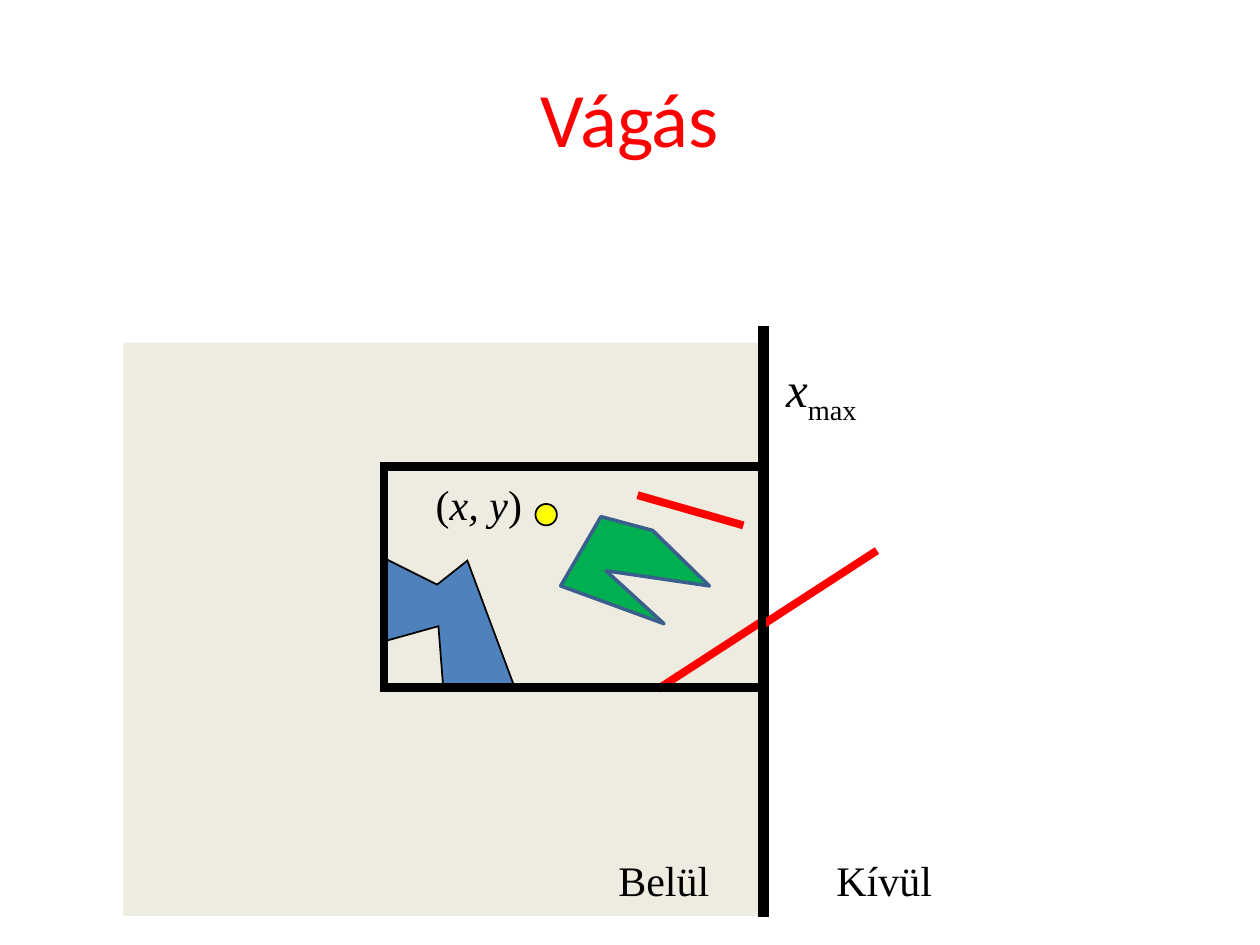
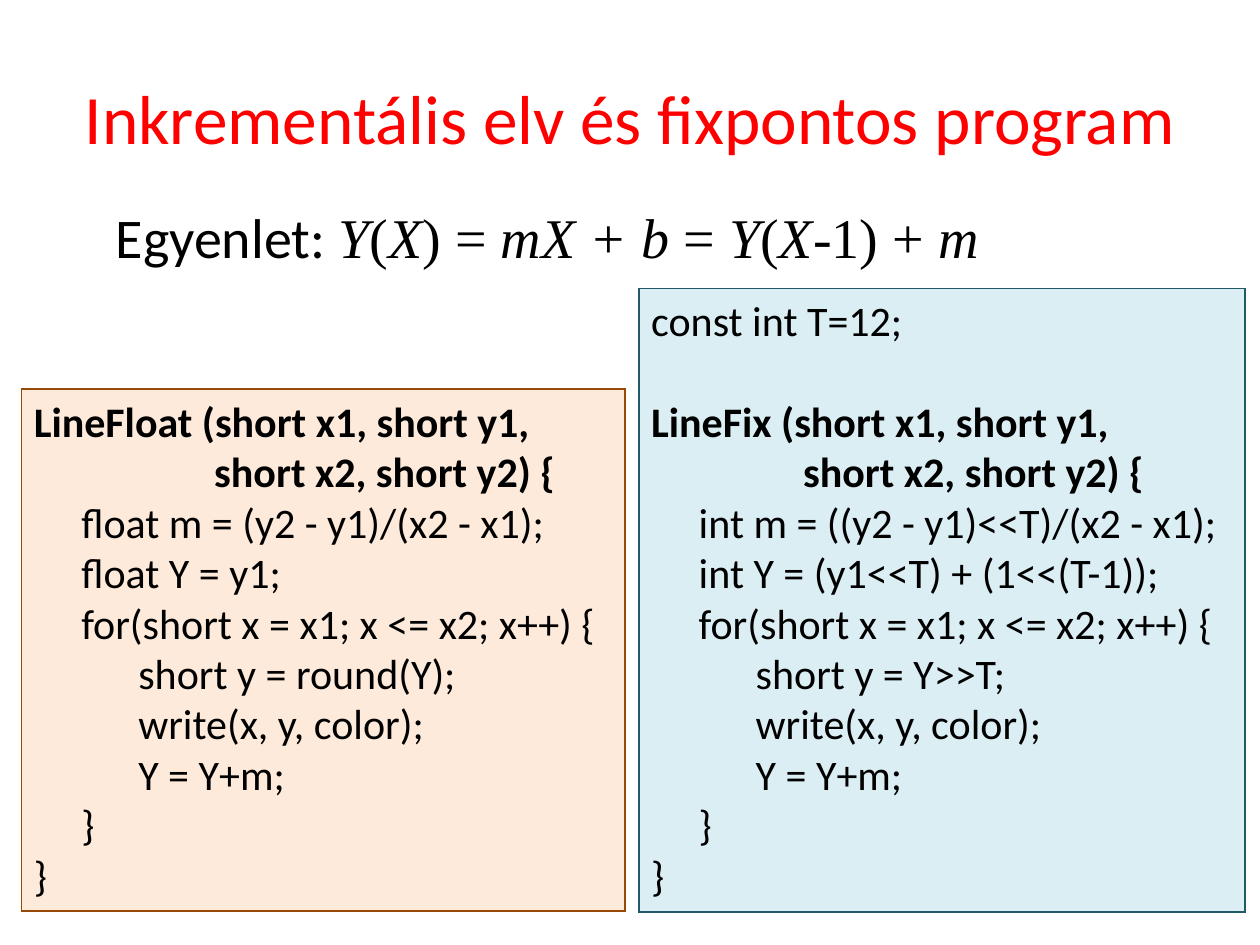
from dataclasses import dataclass

from lxml import etree
from pptx import Presentation
from pptx import util as u
from pptx.dml.color import RGBColor
from pptx.enum import shapes, text
from pptx.oxml.ns import qn


@dataclass(frozen=True)
class Theme:
    black: str = "000000"
    red: str = "FF0000"
    inside: str = "EEECE1"
    blue: str = "4F81BD"
    green: str = "00B050"
    green_edge: str = "3A5F8C"
    yellow: str = "FFFF00"
    sans: str = "Calibri"
    serif: str = "Times New Roman"
    title: float = 44
    long_title: float = 39.6
    equation: float = 32
    axis: float = 28
    body: float = 24
    hairline: float = 1
    outline: float = 2
    segment: float = 4.5
    boundary: float = 6


THEME = Theme()

CLIP_TITLE = "Vágás"
CODE_TITLE = "Inkrementális elv és fixpontos program"

HALF_PLANE = (0.98, 2.72, 5.07, 4.55)
BOUNDARY = ((6.06, 2.59), (6.06, 7.28))
WINDOWS = [(3.05, 3.7, 3, 1.75), (3.05, 3.71, 3, 1.75)]
POINT = (4.25, 4, 0.17, 0.17)
CUT_SEGMENTS = [((6.96, 4.37), (6.05, 4.96)), ((6.05, 4.93), (5.22, 5.47))]
INNER_SEGMENT = ((5.9, 4.17), (5.06, 3.93))
CLIPPED_POLYGON = [(3.05, 4.43), (3.05, 5.09), (3.48, 4.97), (3.52, 5.48),
                   (4.09, 5.47), (3.71, 4.45), (3.47, 4.64)]
INNER_POLYGON = [(4.77, 4.1), (4.45, 4.65), (5.27, 4.95), (4.81, 4.53),
                 (5.63, 4.65), (5.18, 4.21)]
LABELS = [
    ((6.14, 2.8, 0.82, 0.57), THEME.axis, [("x", "i"), ("max", "sub")]),
    ((4.81, 6.73, 0.93, 0.51), THEME.body, [("Belül", "")]),
    ((6.54, 6.73, 0.97, 0.51), THEME.body, [("Kívül", "")]),
    ((3.36, 3.75, 0.89, 0.51), THEME.body, [("(", ""), ("x, y", "i"), (")", "")]),
]

EQUATION_BOX = (0.82, 1.56, 8.5, 0.94)
EQUATION_LEAD = "Egyenlet: "
EQUATION = [("Y", "i"), ("(", ""), ("X", "i"), (") = ", ""), ("mX + b ", "i"),
            ("= ", ""), ("Y", "i"), ("(", ""), ("X", "i"), ("-1) + ", ""), ("m", "i")]

LOOP_HEAD = "     for(short x = x1; x <= x2; x++) {"
LOOP_TAIL = ["           write(x, y, color);", "           Y = Y+m;", "     }", "}"]
LISTINGS = [
    {
        "box": (0.17, 3.09, 4.79, 4.14), "fill": "FDEADA", "edge": "984807",
        "constants": [],
        "signature": ["LineFloat (short x1, short y1,",
                      "                   short x2, short y2) {"],
        "body": ["     float m = (y2 - y1)/(x2 - x1);", "     float Y = y1;",
                 LOOP_HEAD, "           short y = round(Y);"] + LOOP_TAIL,
    },
    {
        "box": (5.07, 2.29, 4.81, 4.95), "fill": "DBEEF4", "edge": "215968",
        "constants": ["const int T=12;"],
        "signature": ["LineFix (short x1, short y1,",
                      "                short x2, short y2) {"],
        "body": ["     int m = ((y2 - y1)<<T)/(x2 - x1);",
                 "     int Y = (y1<<T) + (1<<(T-1));",
                 LOOP_HEAD, "           short y = Y>>T;"] + LOOP_TAIL,
    },
]


def inches(values):
    return [u.Inches(v) for v in values]


def add_run(paragraph, words, size, face, color=THEME.black, style=""):
    run = paragraph.add_run()
    run.text = words
    font = run.font
    font.size, font.name = u.Pt(size), face
    font.bold, font.italic = style == "b", style == "i"
    font.color.rgb = RGBColor.from_string(color)
    if style == "sub":
        run._r.get_or_add_rPr().set("baseline", "-25000")


def paint(shape, fill=None, edge=None, width=THEME.hairline, join="miter"):
    shape.shadow.inherit = False
    if fill:
        shape.fill.solid()
        shape.fill.fore_color.rgb = RGBColor.from_string(fill)
    else:
        shape.fill.background()
    if edge:
        shape.line.color.rgb = RGBColor.from_string(edge)
        shape.line.width = u.Pt(width)
        etree.SubElement(shape._element.spPr.find(qn("a:ln")), qn(f"a:{join}"))
    else:
        shape.line.fill.background()


def add_preset(slide, kind, box, **look):
    shape = slide.shapes.add_shape(kind, *inches(box))
    paint(shape, **look)
    return shape


def add_polygon(slide, points, **look):
    start, *corners = [inches(point) for point in points]
    builder = slide.shapes.build_freeform(*start)
    builder.add_line_segments(corners, close=True)
    paint(builder.convert_to_shape(), **look)


def add_segment(slide, ends, color, width):
    segment = slide.shapes.add_connector(
        shapes.MSO_CONNECTOR.STRAIGHT, *inches(ends[0] + ends[1]))
    segment.line.color.rgb = RGBColor.from_string(color)
    segment.line.width = u.Pt(width)
    etree.SubElement(segment._element.spPr, qn("a:effectLst"))


def add_label(slide, box, size, parts):
    frame = slide.shapes.add_textbox(*inches(box)).text_frame
    frame.word_wrap = False
    frame.auto_size = text.MSO_AUTO_SIZE.SHAPE_TO_FIT_TEXT
    for words, style in parts:
        add_run(frame.paragraphs[0], words, size, THEME.serif, style=style)


def add_titled_slide(deck, words, size):
    slide = deck.slides.add_slide(deck.slide_layouts[5])
    title = slide.shapes.title
    title.left, title.top, title.width, title.height = inches((0.5, 0.3, 9, 1.25))
    frame = title.text_frame
    frame.vertical_anchor = text.MSO_ANCHOR.MIDDLE
    frame.paragraphs[0].alignment = text.PP_ALIGN.CENTER
    add_run(frame.paragraphs[0], words, size, THEME.sans, THEME.red)
    return slide


def add_listing(slide, listing):
    panel = add_preset(slide, shapes.MSO_SHAPE.RECTANGLE, listing["box"],
                       fill=listing["fill"], edge=listing["edge"])
    frame = panel.text_frame
    frame.word_wrap = True
    frame.vertical_anchor = text.MSO_ANCHOR.TOP
    lines = ([(line, "") for line in listing["constants"]]
             + [(line, "b") for line in listing["signature"]]
             + [(line, "") for line in listing["body"]])
    for number, (line, style) in enumerate(lines):
        paragraph = frame.add_paragraph() if number else frame.paragraphs[0]
        paragraph.alignment = text.PP_ALIGN.LEFT
        if number and number == len(listing["constants"]):
            paragraph.space_before = u.Pt(1.2 * THEME.body)
        add_run(paragraph, line, THEME.body, THEME.sans, style=style)


def build_clipping(deck):
    slide = add_titled_slide(deck, CLIP_TITLE, THEME.title)
    rectangle = shapes.MSO_SHAPE.RECTANGLE
    add_preset(slide, rectangle, HALF_PLANE, fill=THEME.inside)
    add_segment(slide, BOUNDARY, THEME.black, THEME.boundary)
    add_polygon(slide, CLIPPED_POLYGON, fill=THEME.blue, edge=THEME.black)
    for ends in CUT_SEGMENTS:
        add_segment(slide, ends, THEME.red, THEME.segment)
    for window in WINDOWS:
        add_preset(slide, rectangle, window, edge=THEME.black, width=THEME.segment)
    add_preset(slide, shapes.MSO_SHAPE.OVAL, POINT, fill=THEME.yellow, edge=THEME.black)
    add_segment(slide, INNER_SEGMENT, THEME.red, THEME.segment)
    add_polygon(slide, INNER_POLYGON, fill=THEME.green,
                edge=THEME.green_edge, width=THEME.outline, join="round")
    for label in LABELS:
        add_label(slide, *label)


def build_programs(deck):
    slide = add_titled_slide(deck, CODE_TITLE, THEME.long_title)
    frame = slide.shapes.add_textbox(*inches(EQUATION_BOX)).text_frame
    frame.word_wrap = True
    equation = frame.paragraphs[0]
    add_run(equation, EQUATION_LEAD, THEME.equation, THEME.sans)
    for words, style in EQUATION:
        add_run(equation, words, THEME.equation, THEME.serif, style=style)
    for listing in LISTINGS:
        add_listing(slide, listing)


def main():
    deck = Presentation()
    deck.slide_width, deck.slide_height = inches((10, 7.5))
    build_clipping(deck)
    build_programs(deck)
    deck.save("out.pptx")


if __name__ == "__main__":
    main()
